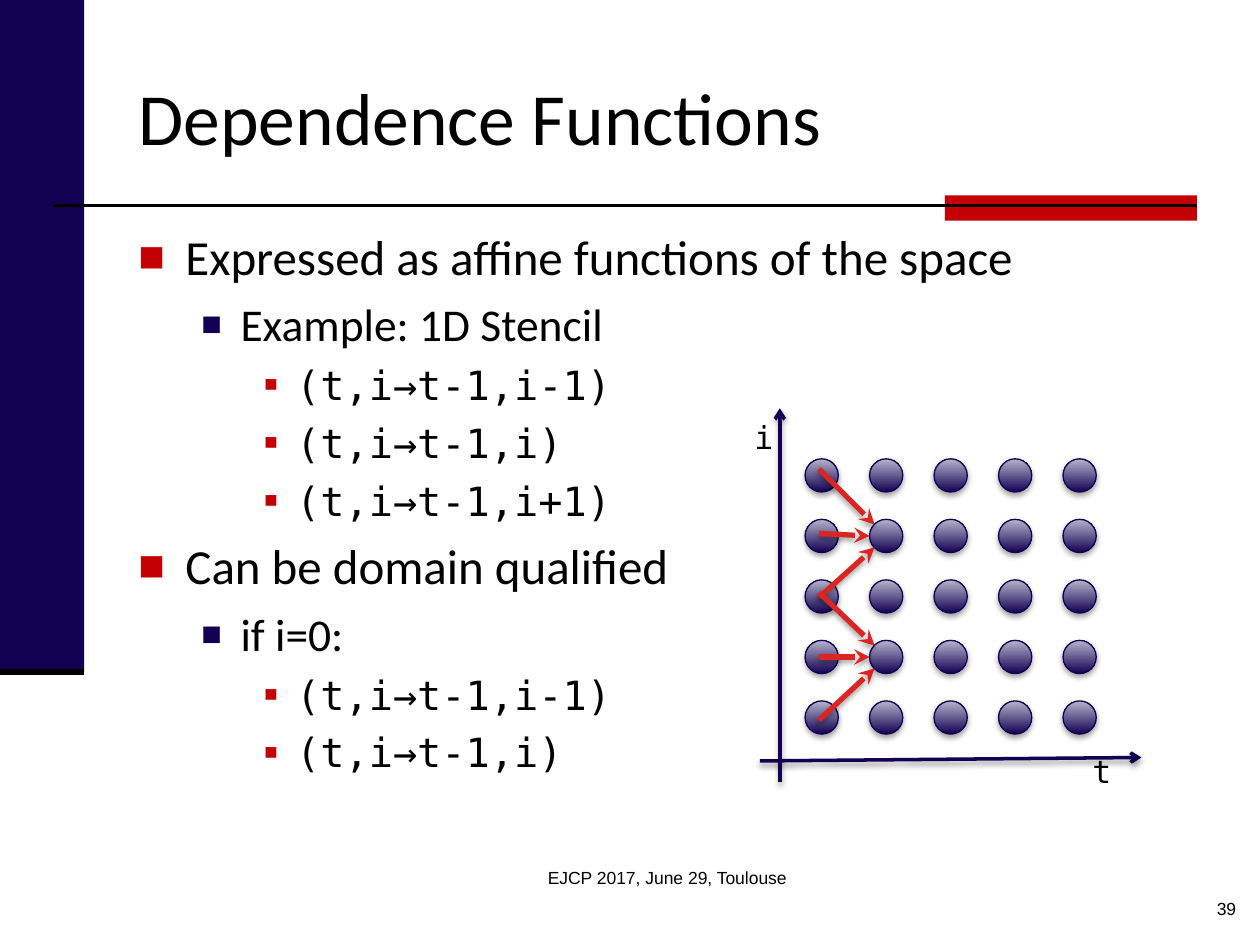
from lxml.etree import SubElement
from pptx import Presentation
from pptx.dml.color import RGBColor
from pptx.enum.shapes import MSO_CONNECTOR, MSO_SHAPE
from pptx.enum.text import MSO_ANCHOR, MSO_AUTO_SIZE, PP_ALIGN
from pptx.oxml.ns import qn
from pptx.util import Cm, Pt

NAVY = RGBColor(0x12, 0x00, 0x53)
LAVENDER = RGBColor(0xB6, 0xB5, 0xCA)
RED = RGBColor(0xC4, 0x00, 0x05)
ARROW_RED = RGBColor(0xDA, 0x25, 0x23)
BLACK = RGBColor(0, 0, 0)
SANS, MONO, SMALL = "Calibri", "DejaVu Sans Mono", "Arial"

# Per level: left margin, hanging indent (cm), bullet colour, bullet %, size, font, space before
LEVELS = [
    (0.95, 0.95, RED, 90, 28, SANS, 6.8),
    (2.06, 0.79, NAVY, 75, 26, SANS, 6.3),
    (3.18, 0.64, RED, 55, 23, MONO, 5.4),
]
OUTLINE = [
    (0, "Expressed as affine functions of the space"),
    (1, "Example: 1D Stencil"),
    (2, "(t,i→t-1,i-1)"),
    (2, "(t,i→t-1,i)"),
    (2, "(t,i→t-1,i+1)"),
    (0, "Can be domain qualified"),
    (1, "if i=0:"),
    (2, "(t,i→t-1,i-1)"),
    (2, "(t,i→t-1,i)"),
]


def write(paragraph, text, size=10, font=SMALL, color=BLACK, align=PP_ALIGN.LEFT):
    paragraph.alignment = align
    run = paragraph.add_run()
    run.text = text
    run.font.size = Pt(size)
    run.font.name = font
    run.font.color.rgb = color


def place(shape, left, top, width, height):
    shape.left, shape.top = Cm(left), Cm(top)
    shape.width, shape.height = Cm(width), Cm(height)


def add_frame(slide, left, top, width, height, wrap=True):
    box = slide.shapes.add_textbox(Cm(left), Cm(top), Cm(width), Cm(height))
    box.text_frame.word_wrap = wrap
    return box.text_frame


def set_shadow(shape, opacity=None):
    """Replace the theme shadow with none, or with a soft one straight below."""
    effects = SubElement(shape._element.spPr, qn("a:effectLst"))
    if opacity:
        shadow = SubElement(effects, qn("a:outerShdw"), blurRad=str(Pt(3.1)),
                            dist=str(Pt(1.8)), dir="5400000", rotWithShape="0")
        black = SubElement(shadow, qn("a:srgbClr"), val="000000")
        SubElement(black, qn("a:alpha"), val=str(opacity * 1000))


def add_line(slide, start, end, color, width, arrow=None, shadow=None):
    line = slide.shapes.add_connector(
        MSO_CONNECTOR.STRAIGHT, *(Cm(value) for value in (*start, *end)))
    line.line.color.rgb = color
    line.line.width = Pt(width)
    if arrow:
        SubElement(line._element.spPr.find(qn("a:ln")), qn("a:tailEnd"), type=arrow)
    set_shadow(line, shadow)


def add_block(slide, left, top, width, height, color):
    block = slide.shapes.add_shape(
        MSO_SHAPE.RECTANGLE, Cm(left), Cm(top), Cm(width), Cm(height))
    block.fill.solid()
    block.fill.fore_color.rgb = color
    block.line.fill.background()
    block.shadow.inherit = False


def add_decoration(slide):
    add_block(slide, 0, 0, 1.7, 13.54, NAVY)
    add_block(slide, 19.05, 3.94, 5.08, 0.51, RED)
    add_line(slide, (1.07, 4.14), (24.13, 4.14), BLACK, 1.5)
    add_line(slide, (0, 13.54), (1.7, 13.54), BLACK, 3.5)


def add_title(slide, left, top, width, height):
    title = slide.shapes.title
    place(title, left, top, width, height)
    frame = title.text_frame
    frame.auto_size = MSO_AUTO_SIZE.NONE
    frame.vertical_anchor = MSO_ANCHOR.MIDDLE
    write(frame.paragraphs[0], "Dependence Functions", size=42, font=SANS)


def add_outline(slide, left, top, width, height):
    frame = add_frame(slide, left, top, width, height)
    for index, (level, text) in enumerate(OUTLINE):
        margin, hanging, color, percent, size, font, gap = LEVELS[level]
        paragraph = frame.add_paragraph() if index else frame.paragraphs[0]
        paragraph.level = level
        props = paragraph._p.get_or_add_pPr()
        props.set("marL", str(Cm(margin)))
        props.set("indent", str(-Cm(hanging)))
        SubElement(SubElement(props, qn("a:buClr")), qn("a:srgbClr"), val=str(color))
        SubElement(props, qn("a:buSzPct"), val=str(percent * 1000))
        SubElement(props, qn("a:buFont"), typeface=SMALL)
        SubElement(props, qn("a:buChar"), char="■")
        if index:
            paragraph.space_before = Pt(gap)
        write(paragraph, text, size=size, font=font)


def add_dot(slide, left, top, size):
    dot = slide.shapes.add_shape(MSO_SHAPE.OVAL, Cm(left), Cm(top), Cm(size), Cm(size))
    dot.fill.gradient()
    dot.fill.gradient_angle = 90
    for stop, color in zip(dot.fill.gradient_stops, (NAVY, LAVENDER)):
        stop.color.rgb = color
    dot.line.color.rgb = NAVY
    dot.line.width = Pt(0.75)
    set_shadow(dot, 35)


def add_stencil(slide, left, top, width, height):
    size, x_step, y_step = 0.67, 1.3, 1.22
    grid_left, grid_top = left + 1.27, top + 1.02

    # Axes
    add_line(slide, (left + 0.36, top + 7.11), (left + width, top + 7.04),
             NAVY, 2, "arrow", 38)
    add_line(slide, (left + 0.76, top + height), (left + 0.76, top),
             NAVY, 2, "arrow", 38)
    for name, x, y in (("t", 6.81, 6.81), ("i", 0, 0.08)):
        label = add_frame(slide, left + x, top + y, 0.71, 1.02, wrap=False)
        write(label.paragraphs[0], name, size=18, font=MONO)

    # Iteration points
    for column in range(5):
        for row in range(5):
            add_dot(slide, grid_left + column * x_step, grid_top + row * y_step, size)

    # Dependences: three sources at t-1 lead to each target
    for row, source_offsets in ((1, (-1.35, -0.05, 1.24)), (3, (-1.3, 0, 1.27))):
        center = grid_top + row * y_step + size / 2
        targets = ((2.67, -0.23), (2.57, 0), (2.67, 0.23))
        for source_offset, (x, target_offset) in zip(source_offsets, targets):
            add_line(slide, (left + 1.55, center + source_offset),
                     (left + x, center + target_offset), ARROW_RED, 3, "stealth", 35)


def add_footer(slide):
    venue = add_frame(slide, 9.32, 17.35, 8.26, 1.27)
    write(venue.paragraphs[0], "EJCP 2017, June 29, Toulouse", align=PP_ALIGN.CENTER)
    number = add_frame(slide, 19.89, 17.98, 5.28, 0.64)
    write(number.paragraphs[0], "39", align=PP_ALIGN.RIGHT)


def main():
    deck = Presentation()
    deck.slide_width, deck.slide_height = Cm(25.4), Cm(19.05)
    slide = deck.slides.add_slide(deck.slide_layouts[5])
    add_decoration(slide)
    add_title(slide, 2.54, 0.76, 21.59, 3.18)
    add_outline(slide, 2.54, 4.44, 21.59, 12.57)
    add_stencil(slide, 14.96, 8.23, 8.05, 7.54)
    add_footer(slide)
    deck.save("out.pptx")


if __name__ == "__main__":
    main()
